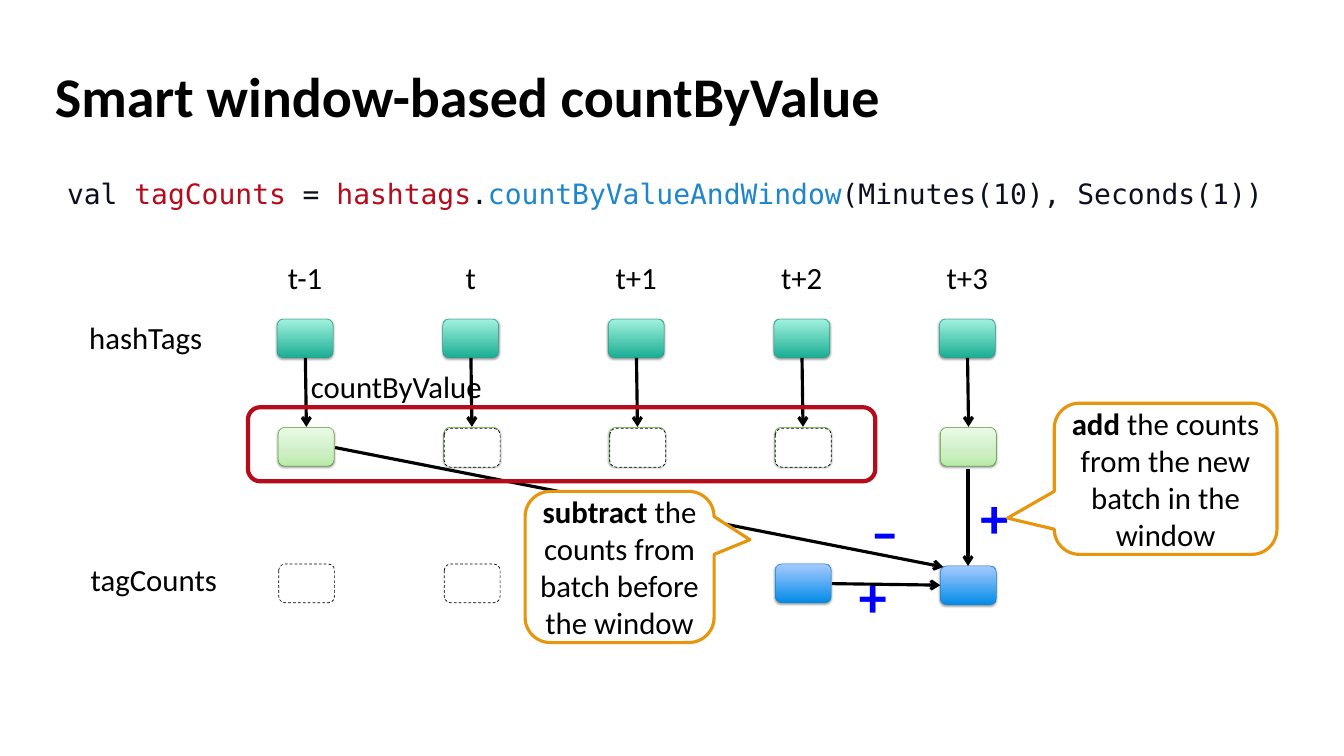
from copy import deepcopy
from lxml.etree import SubElement
from pptx import Presentation
from pptx.dml.color import RGBColor
from pptx.enum.dml import MSO_LINE
from pptx.enum.shapes import MSO_CONNECTOR, MSO_SHAPE
from pptx.enum.text import MSO_ANCHOR, PP_ALIGN
from pptx.oxml.ns import qn
from pptx.util import Inches, Pt

rgb = RGBColor.from_string
GREEN = ["B7EAA8", "CDEFC3", "EBFAE7"], "529827"
TEAL = ["1BAD94", "A1F2DD"], "289B88"
BLUE = ["038BE7", "A6CAFF"], "1884CD"
EMPTY = ["FFFFFF"], "000000"
GOLD = ["FFFFFF"], "E8950E"
FRAME = [], "B50B1B"

deck = Presentation()
deck.slide_width, deck.slide_height = Inches(26.67), Inches(15)
slide = deck.slides.add_slide(deck.slide_layouts[6])
shapes = slide.shapes


def write(text, at=None, shape=None, size=44, font="Calibri", color="000000", bold=False,
          align=PP_ALIGN.LEFT, anchor=MSO_ANCHOR.TOP, pad=(0.1, 0.05, 0.1, 0.05), wrap=True):
    shape = shape or shapes.add_textbox(*map(Inches, at))
    frame = shape.text_frame
    frame.word_wrap = wrap
    frame.vertical_anchor = anchor
    frame.margin_left, frame.margin_top, frame.margin_right, frame.margin_bottom = map(Inches, pad)
    para = frame.paragraphs[0]
    para.alignment = align
    for part, tint, heavy in [(text, color, bold)] if isinstance(text, str) else text:
        run = para.add_run()
        run.text = part
        run.font.size, run.font.name, run.font.bold = Pt(size), font, heavy
        run.font.color.rgb = rgb(tint)


def box(left, top, look, wide=1.11, high=0.77, kind=MSO_SHAPE.FLOWCHART_ALTERNATE_PROCESS, width=0.75):
    fills, edge = look
    shape = shapes.add_shape(kind, Inches(left), Inches(top), Inches(wide), Inches(high))
    shape.line.color.rgb = rgb(edge)
    shape.line.width = Pt(width)
    shape.shadow.inherit = False
    if not fills:
        shape.fill.background()
    elif len(fills) == 1:
        shape.fill.solid()
        shape.fill.fore_color.rgb = rgb(fills[0])
    else:
        shape.fill.gradient()
        shape.fill.gradient_angle = 90
        if len(fills) == 3:
            first = shape.element.spPr.find(".//" + qn("a:gs"))
            first.addnext(deepcopy(first))
        spots = [0, 0.35, 1] if len(fills) == 3 else [0, 1]
        for stop, fill, spot in zip(shape.fill.gradient_stops, fills, spots):
            stop.color.rgb = rgb(fill)
            stop.position = spot
        glow = SubElement(shape.element.spPr.find(qn("a:effectLst")), qn("a:outerShdw"),
                          blurRad=str(Pt(3.1)), dist=str(Pt(1.7)), dir="5400000", rotWithShape="0")
        tone = SubElement(glow, qn("a:srgbClr"), val="000000")
        SubElement(tone, qn("a:alpha"), val="36000")
    if look is EMPTY:
        shape.line.dash_style = MSO_LINE.DASH
    return shape


write("Smart window-based countByValue", (1.03, 1.01, 24.49, 1.74), size=80, bold=True,
      anchor=MSO_ANCHOR.MIDDLE, pad=[0.06] * 4)
ink, red = "0C0F20", "B50B1B"
code = [("val ", ink), ("tagCounts", red), (" = ", ink), ("hashtags", red), (".", ink),
        ("countByValueAndWindow", "1D86CD"), ("(Minutes(10), Seconds(1))", ink)]
write([(part, tint, False) for part, tint in code], (1.33, 3.5, 24.95, 1.42), size=40,
      font="DejaVu Sans Mono", pad=[0] * 4)

cols = [5.5 + 3.285 * i for i in range(5)]
arrows = []
for left, time in zip(cols, ["t-1", "t", "t+1", "t+2", "t+3"]):
    box(left, 6.33, TEAL)
    write(time, (left - 0.2, 5.09, 1.51, 0.86), align=PP_ALIGN.CENTER, pad=(0, 0.05, 0, 0.05))
    box(left + 0.02, 8.48, GREEN)
    arrows.append((left + 0.56, 7.1, left + 0.58, 8.47))
for left in cols[1:4]:
    box(left + 0.03, 8.5, EMPTY, width=1)
for left in cols[:2]:
    box(left + 0.03, 11.19, EMPTY, width=1)
box(cols[3] + 0.03, 11.19, BLUE)
box(cols[4] + 0.02, 11.23, BLUE)

arrows += [(16.51, 11.58, 18.66, 11.61), (19.21, 9.31, 19.21, 11.23), (6.65, 8.88, 18.72, 11.25)]
for ends in arrows:
    arrow = shapes.add_connector(MSO_CONNECTOR.STRAIGHT, *map(Inches, ends))
    arrow.line.color.rgb = rgb("000000")
    arrow.line.width = Pt(4.5)
    SubElement(arrow.line._get_or_add_ln(), qn("a:tailEnd"), type="arrow")
    SubElement(arrow.element.spPr, qn("a:effectLst"))

for sign, at in [("+", (18.89, 9.52, 1.68, 1.4)), ("+", (16.48, 11.1, 1.68, 1.4)),
                 ("–", (16.72, 9.8, 1.68, 1.45))]:
    write(sign, at, size=80, color="0000FF", bold=True, align=PP_ALIGN.CENTER)
for name, at in [("hashTags", (1.67, 6.27, 2.52, 0.84)), ("countByValue", (6.07, 7.25, 3.68, 0.84)),
                 ("tagCounts", (1.7, 11.07, 2.75, 0.84))]:
    write(name, at, wrap=False)

notes = [("add", " the counts from the new batch in the window", 20.92, 8, 4.42, (-0.71, 0.26)),
         ("subtract", " the counts from batch before the window", 10.42, 9.75, 3.75, (0.69, -0.18))]
for verb, rest, left, top, wide, tip in notes:
    note = box(left, top, GOLD, wide, 3, MSO_SHAPE.ROUNDED_RECTANGULAR_CALLOUT, 4.5)
    note.adjustments[0], note.adjustments[1] = tip
    write([(verb, "000000", True), (rest, "000000", False)], shape=note, align=PP_ALIGN.CENTER,
          anchor=MSO_ANCHOR.MIDDLE, pad=(0, 0.05, 0, 0.05))
box(4.92, 8.08, FRAME, 12.45, 1.47, MSO_SHAPE.ROUNDED_RECTANGLE, 6)

deck.save("out.pptx")
